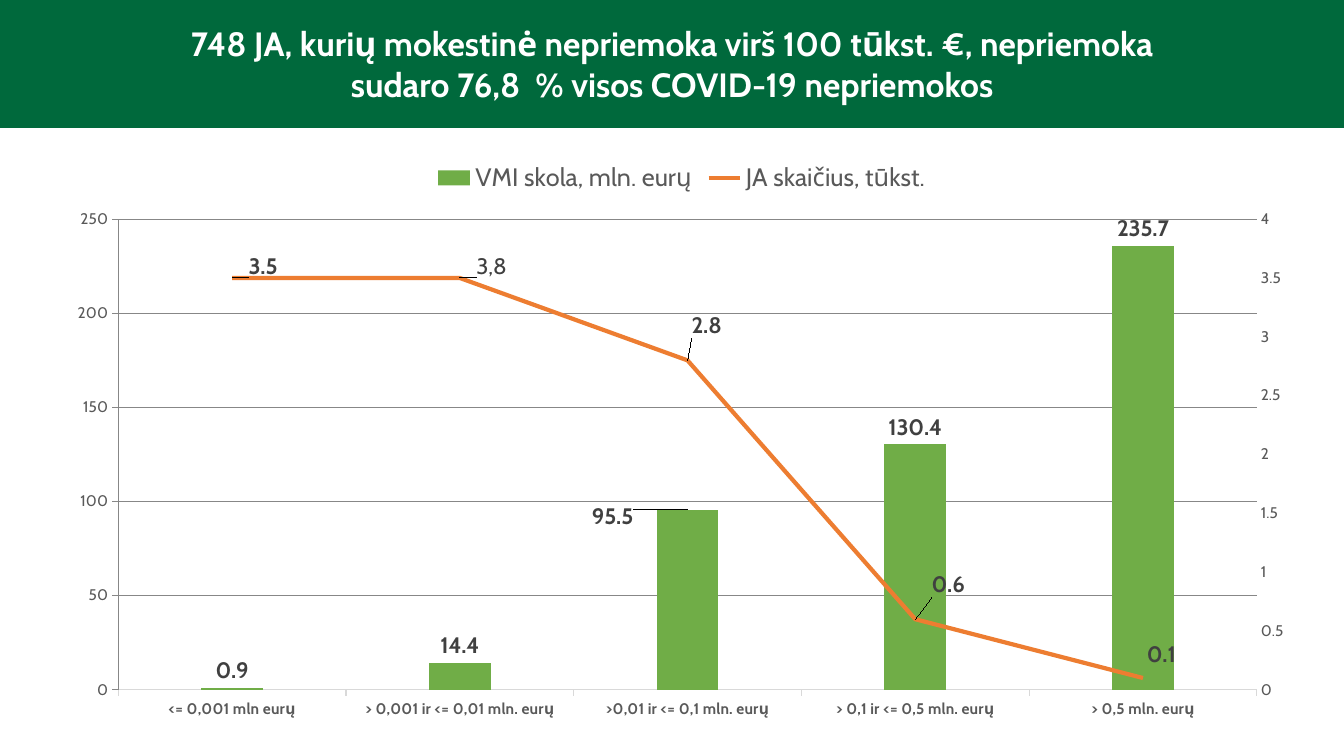
from pptx import Presentation
from pptx.chart.axis import ValueAxis
from pptx.chart.data import CategoryChartData
from pptx.dml.color import RGBColor
from pptx.enum.chart import (XL_CHART_TYPE, XL_LABEL_POSITION, XL_LEGEND_POSITION,
                             XL_MARKER_STYLE, XL_TICK_MARK)
from pptx.enum.shapes import MSO_SHAPE
from pptx.enum.text import MSO_AUTO_SIZE, PP_ALIGN
from pptx.oxml import parse_xml
from pptx.oxml.ns import nsdecls, qn
from pptx.util import Pt

# Content
TITLE = ["748 JA, kurių mokestinė nepriemoka virš 100 tūkst. €, nepriemoka",
         "sudaro 76,8  % visos COVID-19 nepriemokos"]
CATEGORIES = ["<= 0,001 mln eurų", "> 0,001 ir <= 0,01 mln. eurų",
              ">0,01 ir <= 0,1 mln. eurų", "> 0,1 ir <= 0,5 mln. eurų",
              "> 0,5 mln. eurų"]
DEBT = ("VMI skola, mln. eurų", [0.9, 14.4, 95.5, 130.4, 235.7])
COUNT = ("JA skaičius, tūkst. ", [3.5, 3.5, 2.8, 0.6, 0.1])
COUNT_TEXT = {1: "3,8"}

# Label shifts, as shares of the chart's width and height
DEBT_SHIFT = {2: (-0.06, 0.04)}
COUNT_SHIFT = {0: (0.01, -0.02), 1: (0.01, -0.02), 2: (0, -0.06),
               3: (0.01, -0.06), 4: (0, -0.04)}

THEME = {
    "font": "Cabin",
    "band": "00693C", "title": "FFFFFF", "bar": "70AD47", "line": "ED7D31",
    "axis": "595959", "label": "404040", "grid": "D9D9D9",
    "title_size": 24, "legend_size": 18, "label_size": 16, "axis_size": 11,
}

# Geometry in points
SLIDE_W, SLIDE_H = 960, 540
BAND_H = 91.4
TITLE_BOX = (0, 13, SLIDE_W, 65.5)
CHART_BOX = (42.5, 107.3, 892.8, 414)
# Plot area as shares of the chart, from its place in points
PLOT_AREA = {"x": 42 / 892.8, "y": 49.3 / 414, "w": 813.3 / 892.8, "h": 336.2 / 414}


def color(name):
    return RGBColor.from_string(THEME[name])


def style_font(font, size, ink, bold=False):
    font.name = THEME["font"]
    font.size = Pt(THEME[size])
    font.color.rgb = color(ink)
    font.bold = bold


def layout_xml(parts, inner=False):
    modes = ('<c:layoutTarget val="inner"/><c:xMode val="edge"/><c:yMode val="edge"/>'
             if inner else "")
    values = "".join(f'<c:{key} val="{value}"/>' for key, value in parts.items())
    return parse_xml(f'<c:layout {nsdecls("c")}><c:manualLayout>{modes}{values}'
                     '</c:manualLayout></c:layout>')


def style_value_axis(axis, top, step):
    axis.minimum_scale, axis.maximum_scale, axis.major_unit = 0, top, step
    axis.major_tick_mark = axis.minor_tick_mark = XL_TICK_MARK.NONE
    axis.format.line.fill.background()
    style_font(axis.tick_labels.font, "axis_size", "axis")


def label_series(series, position, number_format, shifts, texts):
    labels = series.data_labels
    labels.show_value = True
    labels.number_format = number_format
    labels.number_format_is_linked = False
    labels.position = position
    style_font(labels.font, "label_size", "label", True)
    for idx, (dx, dy) in shifts.items():
        label = series.points[idx].data_label
        if idx in texts:
            r = label.text_frame.paragraphs[0].add_run()
            r.text = texts[idx]
            style_font(r.font, "label_size", "label")
        else:
            style_font(label.font, "label_size", "label", True)
        label.position = position
        for element in labels._element.findall(qn("c:dLbl")):
            if element.find(qn("c:idx")).get("val") == str(idx):
                element.insert(1, layout_xml({"x": dx, "y": dy}))


def move_to_right_axis(chart):
    """Turn the second column series into a line on its own axis."""
    plot_area = chart._chartSpace.chart.plotArea
    bars = plot_area.find(qn("c:barChart"))
    ser = bars.findall(qn("c:ser"))[1]
    for bar_only in ser.findall(qn("c:invertIfNegative")):
        ser.remove(bar_only)
    lines = parse_xml(
        f'<c:lineChart {nsdecls("c")}><c:grouping val="standard"/><c:varyColors val="0"/>'
        '<c:marker val="1"/><c:axId val="5001"/><c:axId val="5002"/></c:lineChart>')
    lines.insert(2, ser)
    bars.addnext(lines)
    right = parse_xml(
        f'<c:valAx {nsdecls("c")}><c:axId val="5002"/><c:scaling/><c:delete val="0"/>'
        '<c:axPos val="r"/><c:numFmt formatCode="General" sourceLinked="0"/>'
        '<c:majorTickMark val="none"/><c:minorTickMark val="none"/>'
        '<c:tickLblPos val="nextTo"/><c:crossAx val="5001"/><c:crosses val="max"/>'
        '<c:crossBetween val="between"/></c:valAx>')
    hidden = parse_xml(
        f'<c:catAx {nsdecls("c")}><c:axId val="5001"/><c:scaling/><c:delete val="1"/>'
        '<c:axPos val="b"/><c:crossAx val="5002"/><c:crosses val="autoZero"/></c:catAx>')
    plot_area.find(qn("c:valAx")).addnext(right)
    right.addnext(hidden)
    return ValueAxis(right)


prs = Presentation()
prs.slide_width, prs.slide_height = Pt(SLIDE_W), Pt(SLIDE_H)
s = prs.slides.add_slide(prs.slide_layouts[6])

# Title band
band = s.shapes.add_shape(MSO_SHAPE.RECTANGLE, 0, 0, Pt(SLIDE_W), Pt(BAND_H))
band.shadow.inherit = False
band.fill.solid()
band.fill.fore_color.rgb = color("band")
band.line.fill.background()

tf = s.shapes.add_textbox(*map(Pt, TITLE_BOX)).text_frame
tf.word_wrap = True
tf.auto_size = MSO_AUTO_SIZE.SHAPE_TO_FIT_TEXT
for i, line in enumerate(TITLE):
    p = tf.add_paragraph() if i else tf.paragraphs[0]
    p.alignment = PP_ALIGN.CENTER
    r = p.add_run()
    r.text = line
    style_font(r.font, "title_size", "title", True)

# Chart
data = CategoryChartData()
data.categories = CATEGORIES
for name, values in (DEBT, COUNT):
    data.add_series(name, values)
chart = s.shapes.add_chart(XL_CHART_TYPE.COLUMN_CLUSTERED, *map(Pt, CHART_BOX), data).chart
chart.has_title = False
style_font(chart.font, "axis_size", "axis")
right_axis = move_to_right_axis(chart)
plot_area = chart._chartSpace.chart.plotArea
for old in plot_area.findall(qn("c:layout")):
    plot_area.remove(old)
plot_area.insert(0, layout_xml(PLOT_AREA, inner=True))

chart.has_legend = True
chart.legend.position = XL_LEGEND_POSITION.TOP
chart.legend.include_in_layout = False
style_font(chart.legend.font, "legend_size", "axis")

# Axes
style_value_axis(chart.value_axis, 250, 50)
style_value_axis(right_axis, 4, 0.5)
cat_axis = chart.category_axis
cat_axis.major_tick_mark = XL_TICK_MARK.OUTSIDE
style_font(cat_axis.tick_labels.font, "axis_size", "axis", True)
chart.value_axis.has_major_gridlines = True
for line in (cat_axis.format.line, chart.value_axis.major_gridlines.format.line):
    line.color.rgb = color("grid")
    line.width = Pt(0.75)

# Series
bar_plot, line_plot = chart.plots
bar_plot.gap_width = 269
bar_plot.vary_by_categories = False
debt, count = bar_plot.series[0], line_plot.series[0]
debt.format.fill.solid()
debt.format.fill.fore_color.rgb = color("bar")
count.format.line.color.rgb = color("line")
count.format.line.width = Pt(3)
count.marker.style = XL_MARKER_STYLE.NONE
count.smooth = False
label_series(debt, XL_LABEL_POSITION.OUTSIDE_END, "General", DEBT_SHIFT, {})
label_series(count, XL_LABEL_POSITION.RIGHT, "0.0", COUNT_SHIFT, COUNT_TEXT)

prs.save("out.pptx")
